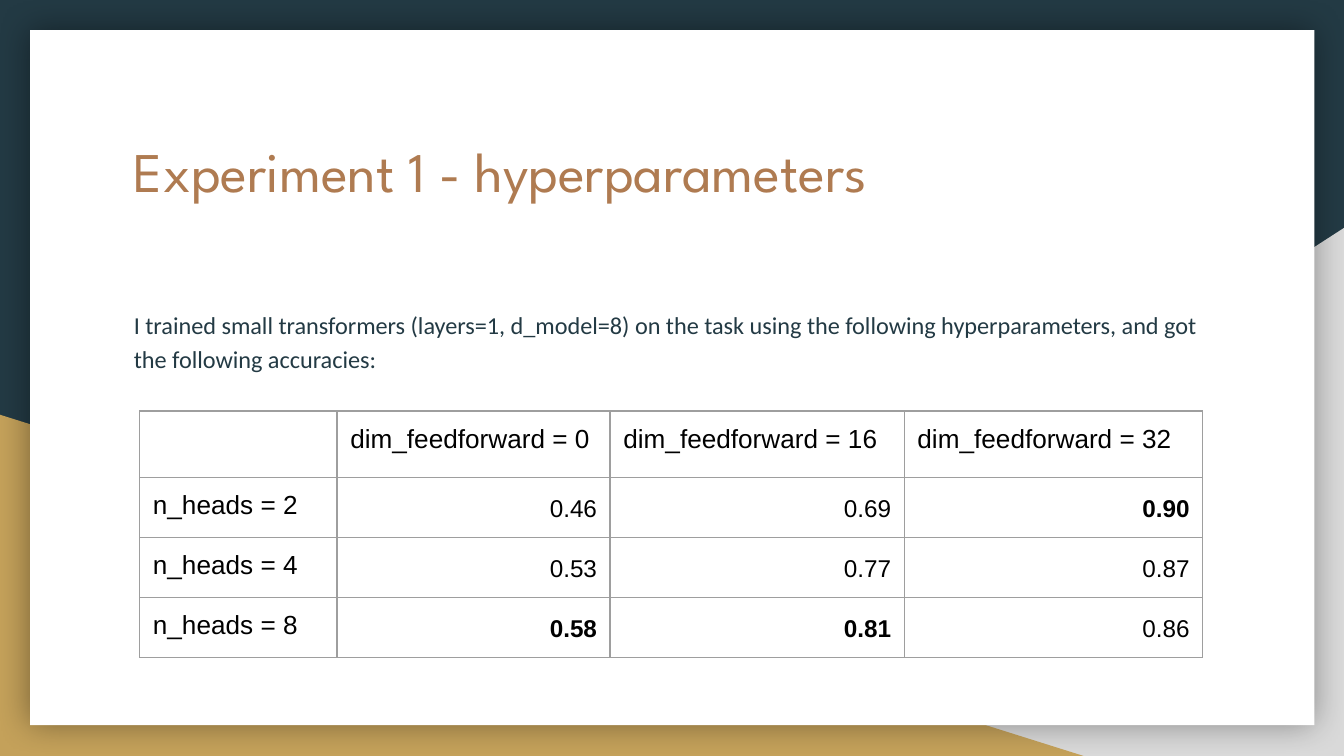
"""Build a slide with a table of accuracies by transformer hyperparameters."""
from dataclasses import dataclass

from lxml.etree import SubElement
from pptx import Presentation
from pptx.dml.color import RGBColor
from pptx.enum.shapes import MSO_SHAPE
from pptx.enum.text import PP_ALIGN
from pptx.oxml import parse_xml
from pptx.oxml.ns import nsdecls, qn
from pptx.util import Cm, Pt


@dataclass(frozen=True)
class Theme:
    navy: str = "233A44"
    grey: str = "D9D9D9"
    gold: str = "C4A15A"
    white: str = "FFFFFF"
    copper: str = "AF7B51"
    black: str = "000000"
    border: str = "9E9E9E"
    title: int = 30
    label: int = 14
    text: int = 13


T = Theme()


def write(tf, text, size=T.label, font="Arial", color=T.black, bold=False,
          align=PP_ALIGN.LEFT, spacing=1.0):
    tf.word_wrap = True
    p = tf.paragraphs[0]
    p.alignment = align
    p.line_spacing = spacing
    r = p.add_run()
    r.text = text
    r.font.size = Pt(size)
    r.font.name = font
    r.font.bold = bold
    r.font.color.rgb = RGBColor.from_string(color)


prs = Presentation()
prs.slide_width, prs.slide_height = Cm(25.4), Cm(14.29)
slide = prs.slides.add_slide(prs.slide_layouts[6])
slide.background.fill.solid()
slide.background.fill.fore_color.rgb = RGBColor.from_string(T.navy)

backdrop = [
    (MSO_SHAPE.RIGHT_TRIANGLE, (9.96, 4.31, 15.44, 9.98), T.grey, True),
    (MSO_SHAPE.RIGHT_TRIANGLE, (0, 7.84, 20.48, 6.45), T.gold, False),
    (MSO_SHAPE.RECTANGLE, (0.57, 0.57, 24.27, 13.14), T.white, False),
]
for kind, box, color, flipped in backdrop:
    s = slide.shapes.add_shape(kind, *map(Cm, box))
    s.shadow.inherit = False
    s.fill.solid()
    s.fill.fore_color.rgb = RGBColor.from_string(color)
    s.line.fill.background()
    if flipped:
        s._element.spPr.find(qn("a:xfrm")).set("flipH", "1")

effects = s._element.spPr.find(qn("a:effectLst"))
effects.append(parse_xml(
    f'<a:outerShdw {nsdecls("a")} blurRad="{Pt(18)}" dist="0" dir="0" algn="ctr" rotWithShape="0">'
    f'<a:srgbClr val="{T.black}"><a:alpha val="40000"/></a:srgbClr></a:outerShdw>'))

texts = [
    ((2.28, 2.34, 20.86, 2.64), "Experiment 1 - hyperparameters",
     dict(size=T.title, font="League Spartan", color=T.copper)),
    ((2.28, 5.54, 20.86, 6.81),
     "I trained small transformers (layers=1, d_model=8) on the task using the "
     "following hyperparameters, and got the following accuracies:",
     dict(size=T.text, font="Calibri", color=T.navy, spacing=1.15)),
]
for box, text, style in texts:
    tf = slide.shapes.add_textbox(*map(Cm, box)).text_frame
    tf.margin_left = tf.margin_right = tf.margin_top = tf.margin_bottom = Cm(0.25)
    write(tf, text, **style)

rows = [
    ["", "dim_feedforward = 0", "dim_feedforward = 16", "dim_feedforward = 32"],
    ["n_heads = 2", "0.46", "0.69", "0.90"],
    ["n_heads = 4", "0.53", "0.77", "0.87"],
    ["n_heads = 8", "0.58", "0.81", "0.86"],
]
widths = [3.73, 5.16, 5.56, 5.64]
heights = [1.22, 1.09, 1.09, 1.09]
best = [max(column) for column in zip(*rows[1:])]

table = slide.shapes.add_table(
    len(rows), len(widths), Cm(2.64), Cm(7.77), Cm(sum(widths)), Cm(sum(heights))).table
table.first_row = table.horz_banding = False
for column, width in zip(table.columns, widths):
    column.width = Cm(width)
for row, height in zip(table.rows, heights):
    row.height = Cm(height)

for i, values in enumerate(rows):
    for j, value in enumerate(values):
        cell = table.cell(i, j)
        cell.margin_left = cell.margin_right = cell.margin_top = cell.margin_bottom = Cm(0.25)
        if i and j:
            write(cell.text_frame, value, size=T.text, bold=value == best[j],
                  align=PP_ALIGN.RIGHT, spacing=1.15)
        elif value:
            write(cell.text_frame, value)
        tcPr = cell._tc.get_or_add_tcPr()
        for side in ("a:lnL", "a:lnR", "a:lnT", "a:lnB"):
            ln = SubElement(tcPr, qn(side), w=str(Pt(0.75)))
            SubElement(SubElement(ln, qn("a:solidFill")), qn("a:srgbClr"), val=T.border)
        cell.fill.background()

prs.save("out.pptx")
